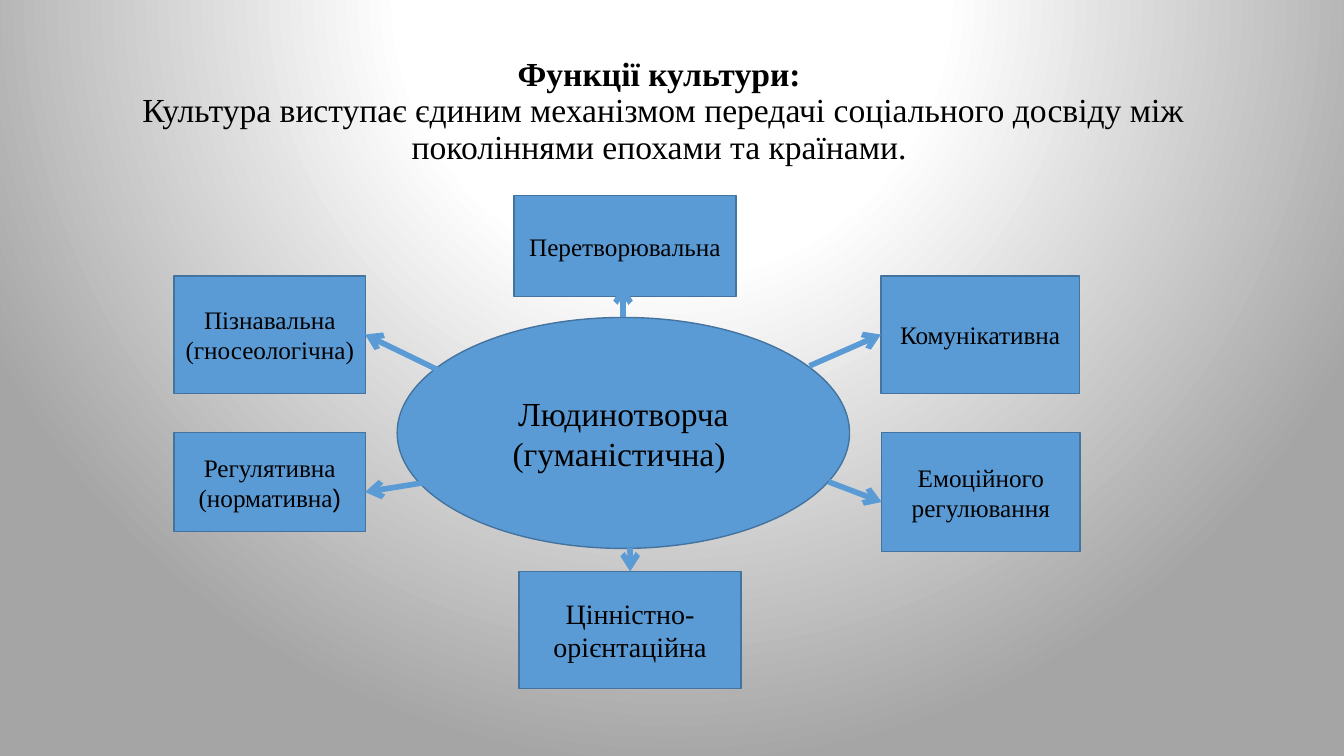
import pptx
import pptx.dml.color
import pptx.enum.dml
import pptx.enum.shapes
import pptx.enum.text
import pptx.oxml
import pptx.oxml.ns
import pptx.util
from pptx.util import Cm

BLACK = pptx.dml.color.RGBColor(0x00, 0x00, 0x00)
BLUE = pptx.dml.color.RGBColor(0x5B, 0x9B, 0xD5)
DARK_BLUE = pptx.dml.color.RGBColor(0x43, 0x73, 0x9E)
FONT = "Times New Roman"
NAMESPACE = pptx.oxml.ns.nsdecls("a")
BACKGROUND_GRADIENT = f"""<a:gradFill {NAMESPACE} rotWithShape="1"><a:gsLst>
<a:gs pos="0"><a:srgbClr val="FFFFFF"/></a:gs>
<a:gs pos="35000"><a:srgbClr val="FFFFFF"/></a:gs>
<a:gs pos="100000"><a:srgbClr val="A5A5A5"/></a:gs></a:gsLst>
<a:path path="circle"><a:fillToRect l="50000" t="-80000" r="50000" b="180000"/></a:path>
</a:gradFill>"""


def format_text(text_frame, size):
    text_frame.word_wrap = True
    text_frame.vertical_anchor = pptx.enum.text.MSO_ANCHOR.MIDDLE
    for paragraph in text_frame.paragraphs:
        paragraph.alignment = pptx.enum.text.PP_ALIGN.CENTER
        for run in paragraph.runs:
            run.font.name = FONT
            run.font.size = pptx.util.Pt(size)
            run.font.color.rgb = BLACK


presentation = pptx.Presentation()
presentation.slide_width = Cm(33.87)
presentation.slide_height = Cm(19.05)
slide = presentation.slides.add_slide(presentation.slide_layouts[5])

# Background
slide.background.fill.solid()
background = slide.background.fill._xPr
background.replace(background[0], pptx.oxml.parse_xml(BACKGROUND_GRADIENT))

# Title
title = slide.shapes.title
title.left, title.top, title.width, title.height = Cm(1.88), Cm(1.32), Cm(29.46), Cm(3)
title.text_frame.text = (
    "Функції культури:\v Культура виступає єдиним механізмом передачі "
    "соціального досвіду між поколіннями епохами та країнами."
)
format_text(title.text_frame, 24)
heading = title.text_frame.paragraphs[0]
heading.line_spacing = 0.9
heading.runs[0].font.bold = True
heading.runs[1].font.bold = False

# Central function and the functions around it
OVAL = pptx.enum.shapes.MSO_SHAPE.OVAL
BOX = pptx.enum.shapes.MSO_SHAPE.RECTANGLE
functions = [
    (OVAL, 10.01, 8, 11.4, 5.82, 24, "Людинотворча (гуманістична) "),
    (BOX, 12.95, 4.93, 5.6, 2.54, 18, "Перетворювальна"),
    (BOX, 22.2, 6.96, 5, 2.95, 18, "Комунікативна"),
    (BOX, 22.22, 10.9, 5, 3, 18, "Емоційного регулювання"),
    (BOX, 4.39, 6.96, 4.82, 2.95, 18, "Пізнавальна\n(гносеологічна)"),
    (BOX, 4.39, 10.9, 4.82, 2.5, 18, "Регулятивна\n(нормативна"),
    (BOX, 13.08, 14.4, 5.6, 2.95, 20, "Цінністно-орієнтаційна"),
]
for kind, left, top, width, height, size, label in functions:
    shape = slide.shapes.add_shape(kind, Cm(left), Cm(top), Cm(width), Cm(height))
    shape.shadow.inherit = False
    shape.fill.solid()
    shape.fill.fore_color.rgb = BLUE
    shape.line.color.rgb = DARK_BLUE
    shape.line.width = pptx.util.Pt(1)
    shape.text_frame.text = label
    format_text(shape.text_frame, size)
    if label.endswith("(нормативна"):
        bracket = shape.text_frame.paragraphs[-1].add_run()
        bracket.text = ")"
        format_text(shape.text_frame, size)
        bracket.font.name = "Arial"

# Arrows from the centre outwards
arrows = [
    (15.7, 8, 15.7, 7.19),
    (15.88, 13.8, 15.88, 14.4),
    (20.4, 9.22, 22.2, 8.43),
    (20.88, 12.14, 22.22, 12.65),
    (10.82, 12.14, 9.2, 12.4),
    (11.2, 9.4, 9.2, 8.43),
]
for ends in arrows:
    arrow = slide.shapes.add_connector(
        pptx.enum.shapes.MSO_CONNECTOR.STRAIGHT, *[Cm(value) for value in ends]
    )
    arrow.line.color.rgb = BLUE
    arrow.line.width = pptx.util.Pt(4)
    arrow.line._get_or_add_ln().append(
        pptx.oxml.parse_xml(f'<a:tailEnd {NAMESPACE} type="arrow"/>')
    )
    arrow._element.spPr.append(pptx.oxml.parse_xml(f"<a:effectLst {NAMESPACE}/>"))

presentation.save("out.pptx")
